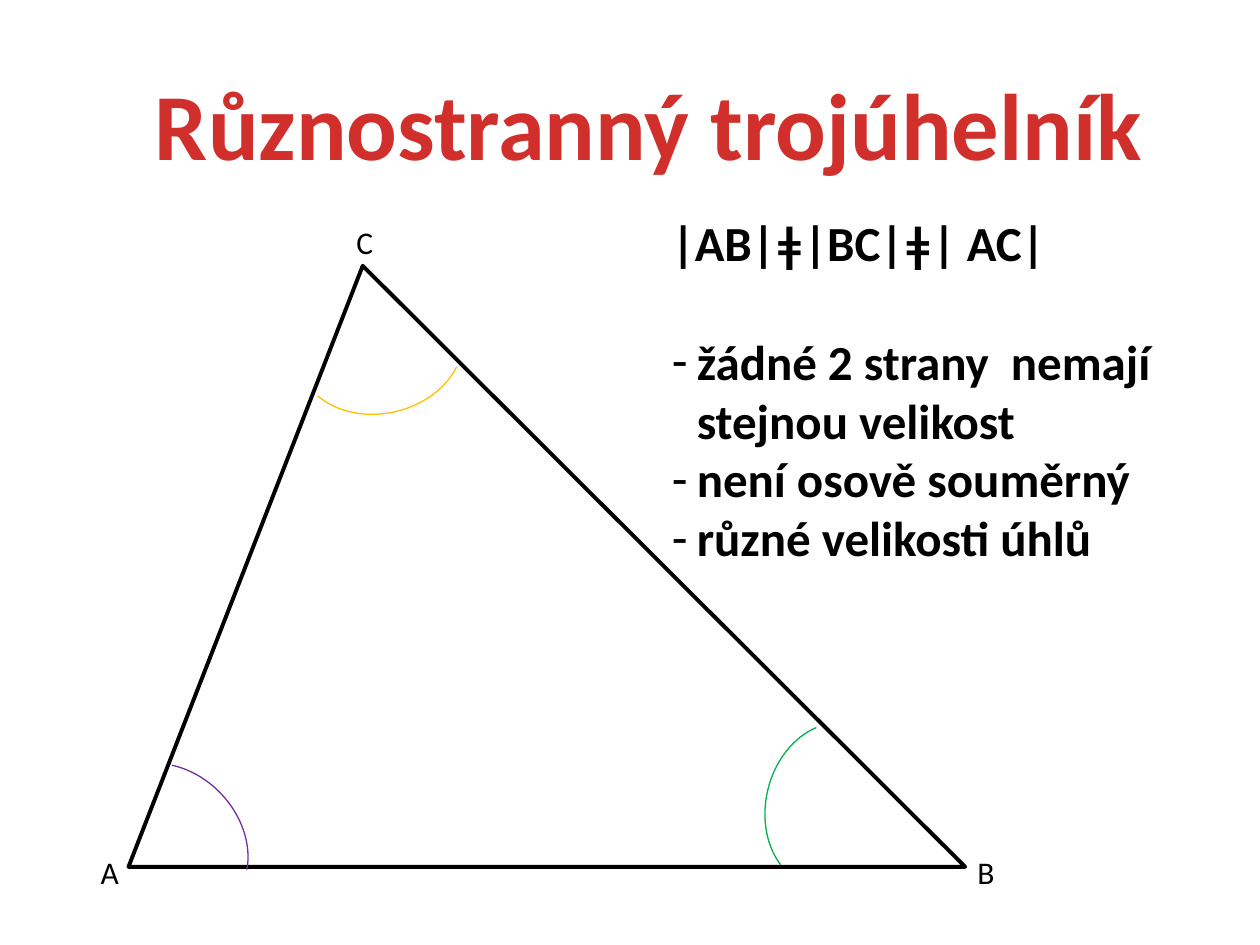
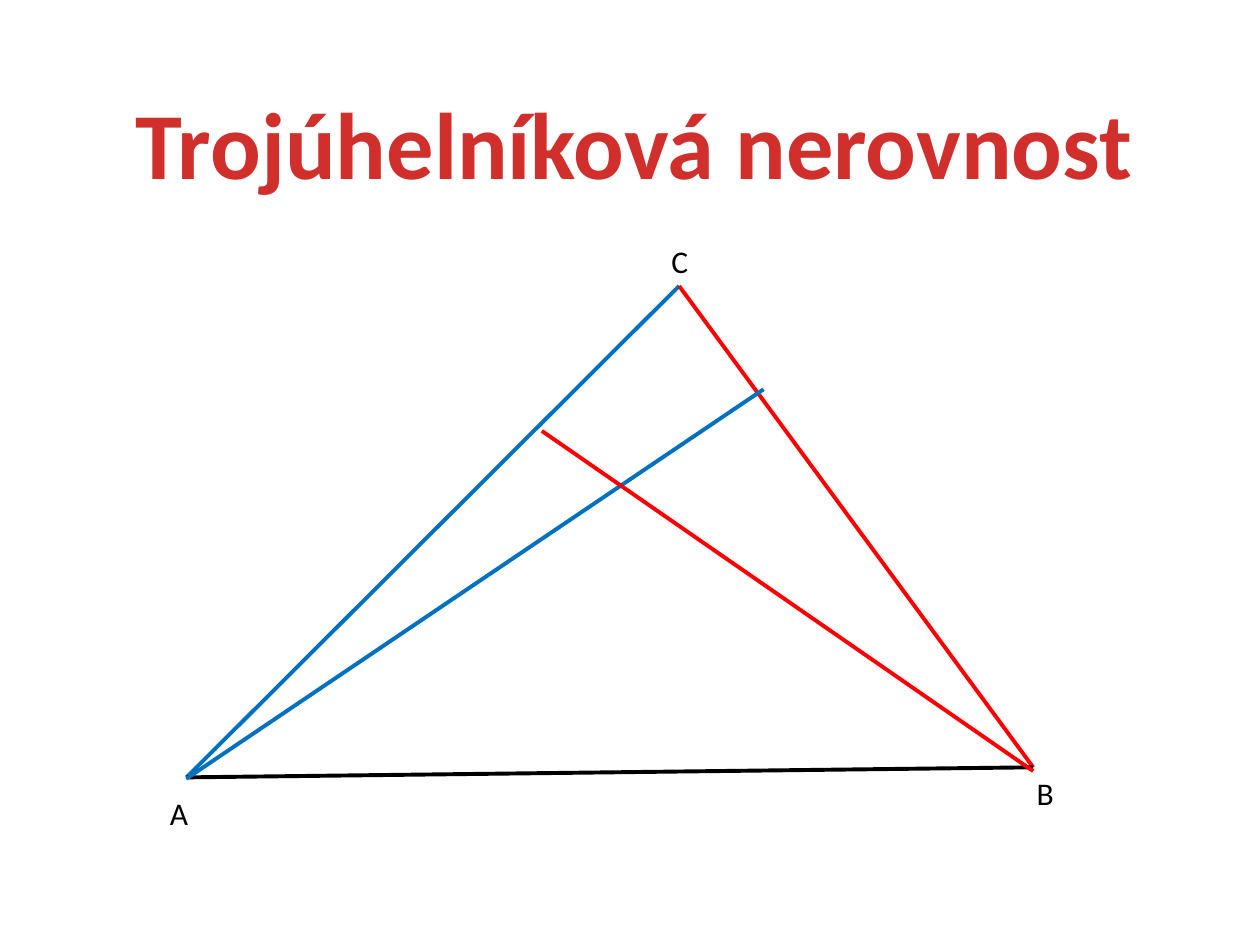
from copy import deepcopy
from typing import NamedTuple

from lxml import etree
from pptx import Presentation
from pptx import util as u
from pptx.dml.color import RGBColor
from pptx.enum import shapes, text
from pptx.oxml import ns

FONT = "Calibri"
BLACK = RGBColor(0x00, 0x00, 0x00)
PURPLE = RGBColor(0x70, 0x30, 0xA0)
GREEN = RGBColor(0x00, 0xB0, 0x50)
AMBER = RGBColor(0xFF, 0xC0, 0x00)
BLUE = RGBColor(0x00, 0x70, 0xC0)
RED = RGBColor(0xFF, 0x00, 0x00)
TITLE_STOPS = (
    (0, RGBColor(0xFC, 0x7C, 0x7A)),
    (0.75, RGBColor(0xD0, 0x2F, 0x2C)),
    (1, RGBColor(0xC7, 0x05, 0x00)),
)

SLIDE_W, SLIDE_H = u.Inches(10), u.Inches(7.5)
COLS, ROWS = 100, 75
SIDE_PT, ARC_PT = 2.25, 0.75
TITLE_PT, BODY_PT, LABEL_PT = 54, 28, 18
BLANK_LINE = u.Pt(34)
HANG = u.Inches(0.2)


class Box(NamedTuple):
    col: float
    row: float
    cols: float
    rows: float


class Point(NamedTuple):
    col: float
    row: float


class Label(NamedTuple):
    name: str
    at: Point


class AngleArc(NamedTuple):
    at: Point
    rotation: float
    start: float
    color: RGBColor


class Segment(NamedTuple):
    begin: Point
    end: Point
    color: RGBColor


class Line(NamedTuple):
    words: str
    bullet: bool = False
    indented: bool = False
    before: int = u.Pt(0)


def x(col: float) -> int:
    return round(SLIDE_W * col / COLS)


def y(row: float) -> int:
    return round(SLIDE_H * row / ROWS)


def area(box: Box) -> tuple:
    return x(box.col), y(box.row), x(box.cols), y(box.rows)


def place(sp, box: Box) -> None:
    sp.left, sp.top, sp.width, sp.height = area(box)


def fit_frame(sp, wrap: bool):
    tf = sp.text_frame
    tf.word_wrap = wrap
    tf.auto_size = text.MSO_AUTO_SIZE.SHAPE_TO_FIT_TEXT
    return tf


def add_run(p, words: str, size: float, bold: bool = False):
    r = p.add_run()
    r.text = words
    r.font.name, r.font.size, r.font.bold = FONT, u.Pt(size), bold
    return r


def set_title(s, words: str, box: Box) -> None:
    sp = s.shapes.title
    place(sp, box)
    p = fit_frame(sp, False).paragraphs[0]
    p.alignment = text.PP_ALIGN.CENTER
    r = add_run(p, words, TITLE_PT, True)
    fill = r.font.fill
    fill.gradient()
    fill.gradient_angle = 270
    stops = r._r.find(".//" + ns.qn("a:gsLst"))
    stops.append(deepcopy(stops[0]))
    for stop, (position, color) in zip(fill.gradient_stops, TITLE_STOPS):
        stop.position, stop.color.rgb = position, color


def set_list(s, lines: tuple, box: Box) -> None:
    sp = s.placeholders[1]
    place(sp, box)
    tf = fit_frame(sp, True)
    tf.vertical_anchor = text.MSO_ANCHOR.TOP
    for i, line in enumerate(lines):
        p = tf.paragraphs[0] if i == 0 else tf.add_paragraph()
        p.space_before = line.before
        p_pr = p._p.get_or_add_pPr()
        p_pr.set("marL", str(HANG if line.indented else 0))
        p_pr.set("indent", str(-HANG if line.bullet else 0))
        if line.bullet:
            etree.SubElement(p_pr, ns.qn("a:buFontTx"))
            etree.SubElement(p_pr, ns.qn("a:buChar")).set("char", "-")
        else:
            etree.SubElement(p_pr, ns.qn("a:buNone"))
        add_run(p, line.words, BODY_PT, True).font.color.rgb = BLACK


def add_label(s, label: Label) -> None:
    tf = fit_frame(s.shapes.add_textbox(*area(Box(*label.at, 3.4, 4))), False)
    add_run(tf.paragraphs[0], label.name, LABEL_PT).font.color.rgb = BLACK


def add_outline(s, kind, box: Box, adjustments: tuple, color: RGBColor, width: float):
    sp = s.shapes.add_shape(kind, *area(box))
    for i, value in enumerate(adjustments):
        sp.adjustments[i] = value
    sp.shadow.inherit = False
    sp.fill.background()
    sp.line.color.rgb, sp.line.width = color, u.Pt(width)
    return sp


def add_arc(s, arc: AngleArc) -> None:
    sp = add_outline(s, shapes.MSO_SHAPE.ARC, Box(*arc.at, 13.2, 10.4),
                     (arc.start, 201.28), arc.color, ARC_PT)
    sp.rotation = arc.rotation


def add_segment(s, seg: Segment) -> None:
    cx = s.shapes.add_connector(
        shapes.MSO_CONNECTOR.STRAIGHT,
        x(seg.begin.col), y(seg.begin.row), x(seg.end.col), y(seg.end.row))
    cx.line.color.rgb, cx.line.width = seg.color, u.Pt(SIDE_PT)
    etree.SubElement(cx._element.spPr, ns.qn("a:effectLst"))


def build_scalene(prs) -> None:
    s = prs.slides.add_slide(prs.slide_layouts[1])
    set_title(s, "Různostranný trojúhelník", Box(10.9, 4.7, 81.2, 10.1))
    add_outline(s, shapes.MSO_SHAPE.ISOSCELES_TRIANGLE, Box(10.2, 21.1, 66.4, 47.7),
                (0.28,), BLACK, SIDE_PT)
    for label in (Label("A", Point(7, 67.2)), Label("B", Point(76.6, 67.2)),
                  Label("C", Point(27.3, 17.2))):
        add_label(s, label)
    set_list(s, (
        Line("|AB|ǂ|BC|ǂ| AC|"),
        Line("žádné 2 strany  nemají", bullet=True, indented=True, before=BLANK_LINE),
        Line("stejnou velikost", indented=True),
        Line("není osově souměrný", bullet=True, indented=True),
        Line("různé velikosti úhlů", bullet=True, indented=True),
    ), Box(52.3, 16.4, 43.8, 29.3))
    for arc in (AngleArc(Point(7.2, 61.4), 47.2, 132.75, PURPLE),
                AngleArc(Point(59.4, 58.7), 283.5, 124.2, GREEN),
                AngleArc(Point(23.6, 22.4), 167.2, 124.2, AMBER)):
        add_arc(s, arc)


def build_inequality(prs) -> None:
    s = prs.slides.add_slide(prs.slide_layouts[5])
    set_title(s, "Trojúhelníková nerovnost", Box(9.4, 6.2, 81.9, 10.1))
    a, b, c = Point(14.8, 61.7), Point(82, 60.9), Point(53.9, 22.7)
    for seg in (Segment(a, c, BLUE), Segment(c, b, RED), Segment(a, b, BLACK),
                Segment(Point(14.8, 61.8), Point(60.6, 30.9), BLUE),
                Segment(Point(43, 34.2), Point(82, 61.2), RED)):
        add_segment(s, seg)
    for label in (Label("C", Point(52.3, 18.7)), Label("A", Point(12.5, 62.5)),
                  Label("B", Point(81.3, 60.9))):
        add_label(s, label)


def main() -> None:
    prs = Presentation()
    prs.slide_width, prs.slide_height = SLIDE_W, SLIDE_H
    build_scalene(prs)
    build_inequality(prs)
    prs.save("out.pptx")


if __name__ == "__main__":
    main()
